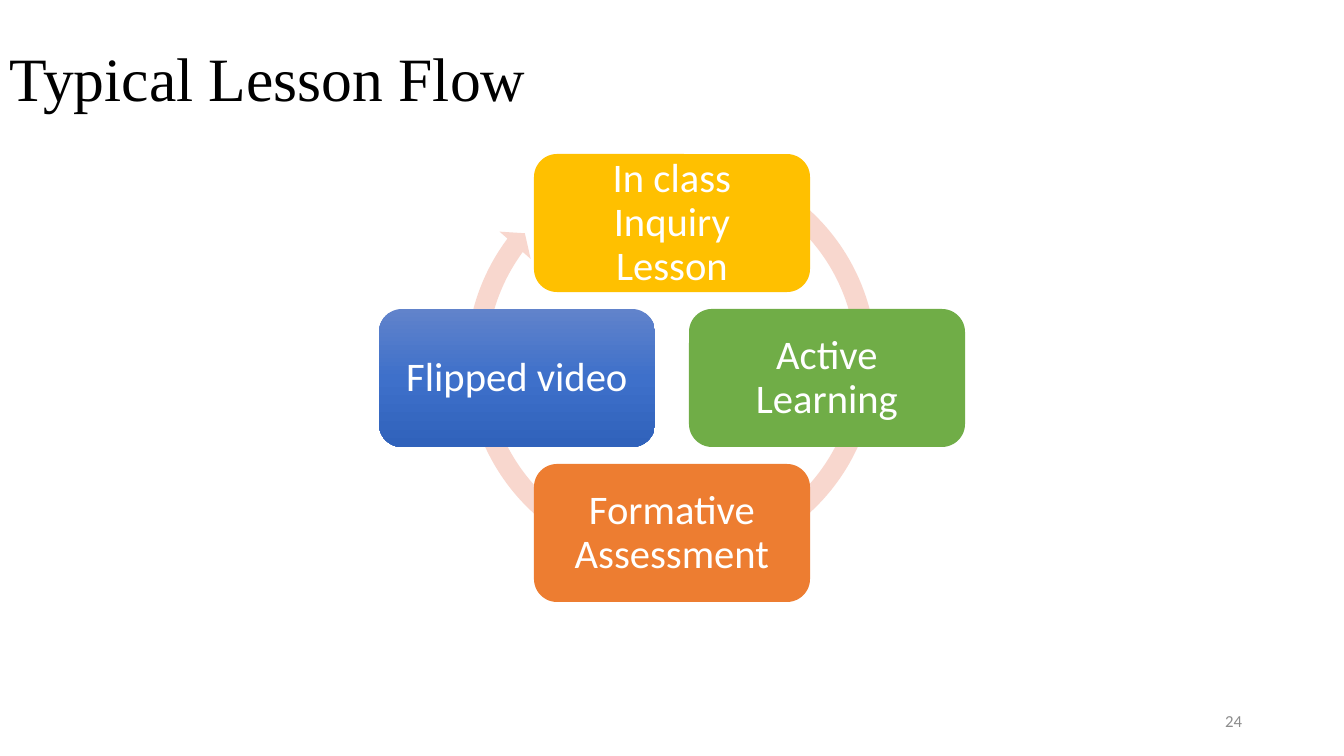
from copy import deepcopy

from pptx import Presentation
from pptx.dml.color import RGBColor
from pptx.enum.shapes import MSO_SHAPE
from pptx.enum.text import MSO_ANCHOR, PP_ALIGN
from pptx.oxml.ns import qn
from pptx.util import Emu, Pt

ROUNDED = MSO_SHAPE.ROUNDED_RECTANGLE
CIRCULAR_ARROW = MSO_SHAPE.CIRCULAR_ARROW
MIDDLE = MSO_ANCHOR.MIDDLE
LEFT, CENTER, RIGHT = PP_ALIGN.LEFT, PP_ALIGN.CENTER, PP_ALIGN.RIGHT

SLIDE_WIDTH, SLIDE_HEIGHT = 1344, 756
EMU_PER_PX = 12192000 / SLIDE_WIDTH

# Cycle steps: text, fill (one colour or gradient), column and row from the centre
STEPS = [
    ("In class Inquiry Lesson", ["FFC000"], 0, -1),
    ("Active Learning", ["70AD47"], 1, 0),
    ("Formative Assessment", ["ED7D31"], 0, 1),
    ("Flipped video", ["6183CB", "3E70CA", "3062BB"], -1, 0),
]


def px(length):
    return Emu(round(length * EMU_PER_PX))


def color(hex_string):
    return RGBColor.from_string(hex_string)


def write(shape, text, size, font, hex_color, align, line_spacing=1.0):
    frame = shape.text_frame
    frame.word_wrap = True
    frame.vertical_anchor = MIDDLE
    paragraph = frame.paragraphs[0]
    paragraph.alignment = align
    paragraph.line_spacing = line_spacing
    run = paragraph.add_run()
    run.text = text
    run.font.size = Pt(size)
    run.font.name = font
    run.font.color.rgb = color(hex_color)


def fill_shape(shape, colors):
    if len(colors) == 1:
        shape.fill.solid()
        shape.fill.fore_color.rgb = color(colors[0])
        return
    # Evenly spaced stops running from top to bottom
    shape.fill.gradient()
    shape.fill.gradient_angle = 270
    stop_list = shape._element.spPr.find(qn("a:gradFill")).find(qn("a:gsLst"))
    while len(stop_list) < len(colors):
        stop_list.append(deepcopy(stop_list[0]))
    for index, stop in enumerate(shape.fill.gradient_stops):
        stop.position = index / (len(colors) - 1)
        stop.color.rgb = color(colors[index])


def add_plain_shape(slide, kind, box, colors):
    shape = slide.shapes.add_shape(kind, *map(px, box))
    shape.shadow.inherit = False
    shape.line.fill.background()
    fill_shape(shape, colors)
    return shape


def add_label(slide, box, *text_style):
    label = slide.shapes.add_textbox(*map(px, box))
    write(label, *text_style)


def add_step(slide, box, text, colors):
    card = add_plain_shape(slide, ROUNDED, box, colors)
    frame = card.text_frame
    frame.margin_left = frame.margin_right = px(15)
    frame.margin_top = frame.margin_bottom = px(12)
    write(card, text, 29, "Calibri", "FFFFFF", CENTER, 0.9)


def add_cycle(slide, box):
    left, top, width, height = box
    card_width, card_height, step = 276, 138, 155

    # Ring behind the cards
    ring_size = 431
    ring_box = (left + (width - ring_size) // 2, top - 8, ring_size, ring_size)
    ring = add_plain_shape(slide, CIRCULAR_ARROW, ring_box, ["F8D7CE"])
    for index, value in enumerate((0.047, 2.729, 129.974, 179.187, 0.048)):
        ring.adjustments[index] = value

    # Cards around the centre
    center_left = left + (width - card_width) // 2
    center_top = top + (height - card_height) // 2
    for text, colors, column, row in STEPS:
        card_box = (center_left + column * step, center_top + row * step,
                    card_width, card_height)
        add_step(slide, card_box, text, colors)


def main():
    presentation = Presentation()
    presentation.slide_width = px(SLIDE_WIDTH)
    presentation.slide_height = px(SLIDE_HEIGHT)
    slide = presentation.slides.add_slide(presentation.slide_layouts[6])

    # Title and slide number
    add_label(slide, (0, 0, 818, 163), "Typical Lesson Flow", 44,
              "Times New Roman", "000000", LEFT, 0.9)
    add_label(slide, (950, 701, 302, 40), "24", 12, "Calibri", "8C8C8C", RIGHT)

    # Lesson cycle
    add_cycle(slide, (379, 154, 586, 448))
    presentation.save("out.pptx")


if __name__ == "__main__":
    main()
